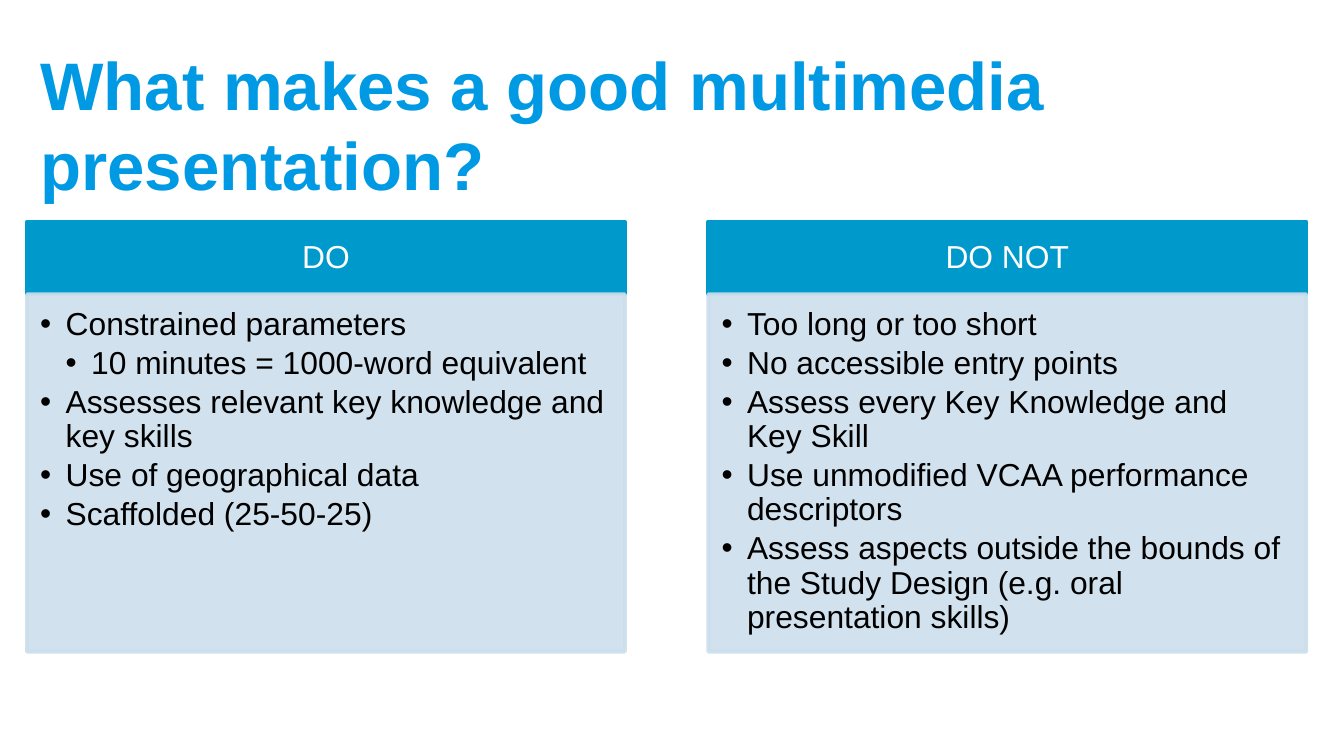
from lxml import etree
from pptx import Presentation
from pptx import util as u
from pptx.dml.color import RGBColor
from pptx.enum import shapes, text
from pptx.oxml.ns import qn

TITLE = "What makes a good multimedia presentation?"
COLUMNS = [
    ("DO", [
        (1, "Constrained parameters"),
        (2, "10 minutes = 1000-word equivalent"),
        (1, "Assesses relevant key knowledge and key skills"),
        (1, "Use of geographical data"),
        (1, "Scaffolded (25-50-25)"),
    ]),
    ("DO NOT", [
        (1, "Too long or too short"),
        (1, "No accessible entry points"),
        (1, "Assess every Key Knowledge and Key Skill"),
        (1, "Use unmodified VCAA performance descriptors"),
        (1, "Assess aspects outside the bounds of the Study Design "
            "(e.g. oral presentation skills)"),
    ]),
]
COLORS = {"title": "0099E3", "header": "0099CC", "panel": "CCDEEC",
          "light": "FFFFFF", "dark": "000000"}
FONT = "Arial"
SLIDE_WIDTH = 10
SLIDE_HEIGHT = SLIDE_WIDTH * 9 / 16
LEFT, TOP = 0.2, 1.65
COLUMN_WIDTH, COLUMN_GAP = 4.45, 0.62
HEADER_HEIGHT, PANEL_HEIGHT = 0.54, 2.66
INDENT = 0.19


def style_font(font, size, color, bold=False):
    font.name, font.size, font.bold = FONT, u.Pt(size), bold
    font.color.rgb = RGBColor.from_string(COLORS[color])


def add_block(page, left, top, height, color, insets, anchor):
    box = page.shapes.add_shape(
        shapes.MSO_SHAPE.RECTANGLE,
        *(u.Inches(n) for n in (left, top, COLUMN_WIDTH, height)))
    box.shadow.inherit = False
    box.fill.solid()
    box.fill.fore_color.rgb = RGBColor.from_string(COLORS[color])
    box.line.color.rgb = RGBColor.from_string(COLORS[color])
    box.line.width = u.Pt(2)
    frame = box.text_frame
    frame.word_wrap = True
    frame.vertical_anchor = anchor
    (frame.margin_left, frame.margin_top,
     frame.margin_right, frame.margin_bottom) = (u.Inches(n) for n in insets)
    return box


def set_opacity(box, percent):
    for color in box._element.spPr.iter(qn("a:srgbClr")):
        etree.SubElement(color, qn("a:alpha"), val=str(percent * 1000))


def add_bullets(frame, items):
    for index, (level, words) in enumerate(items):
        para = frame.paragraphs[0] if index == 0 else frame.add_paragraph()
        para.text = words
        para.level = level - 1
        properties = para._p.get_or_add_pPr()
        properties.set("marL", str(u.Inches(INDENT * level)))
        properties.set("indent", str(-u.Inches(INDENT)))
        etree.SubElement(properties, qn("a:buFont"), typeface=FONT)
        etree.SubElement(properties, qn("a:buChar"), char="•")
        para.alignment = text.PP_ALIGN.LEFT
        para.line_spacing = 0.9
        para.space_after = u.Pt(2.55)
        style_font(para.font, 17, "dark")
        for span in para.runs:
            span.font.size = u.Pt(17)


def add_column(page, left, heading, items):
    header = add_block(page, left, TOP, HEADER_HEIGHT, "header",
                       (0.13, 0.08, 0.13, 0.08), text.MSO_ANCHOR.MIDDLE)
    para = header.text_frame.paragraphs[0]
    para.text = heading
    para.alignment = text.PP_ALIGN.CENTER
    para.line_spacing = 0.9
    style_font(para.font, 17, "light")

    panel = add_block(page, left, TOP + HEADER_HEIGHT, PANEL_HEIGHT, "panel",
                      (0.1, 0.1, 0.13, 0.15), text.MSO_ANCHOR.TOP)
    set_opacity(panel, 90)
    add_bullets(panel.text_frame, items)


def main():
    deck = Presentation()
    deck.slide_width = u.Inches(SLIDE_WIDTH)
    deck.slide_height = u.Inches(SLIDE_HEIGHT)
    page = deck.slides.add_slide(deck.slide_layouts[5])

    title = page.shapes.title
    title.left, title.top = u.Inches(LEFT), u.Inches(0.45)
    title.width, title.height = u.Inches(9.53), u.Inches(0.94)
    title.text_frame.text = TITLE
    title.text_frame.word_wrap = True
    title.text_frame.auto_size = text.MSO_AUTO_SIZE.NONE
    title.text_frame.vertical_anchor = text.MSO_ANCHOR.MIDDLE
    para = title.text_frame.paragraphs[0]
    para.alignment = text.PP_ALIGN.LEFT
    style_font(para.font, 36, "title", bold=True)

    for index, (heading, items) in enumerate(COLUMNS):
        left = LEFT + index * (COLUMN_WIDTH + COLUMN_GAP)
        add_column(page, left, heading, items)

    deck.save("out.pptx")


if __name__ == "__main__":
    main()
